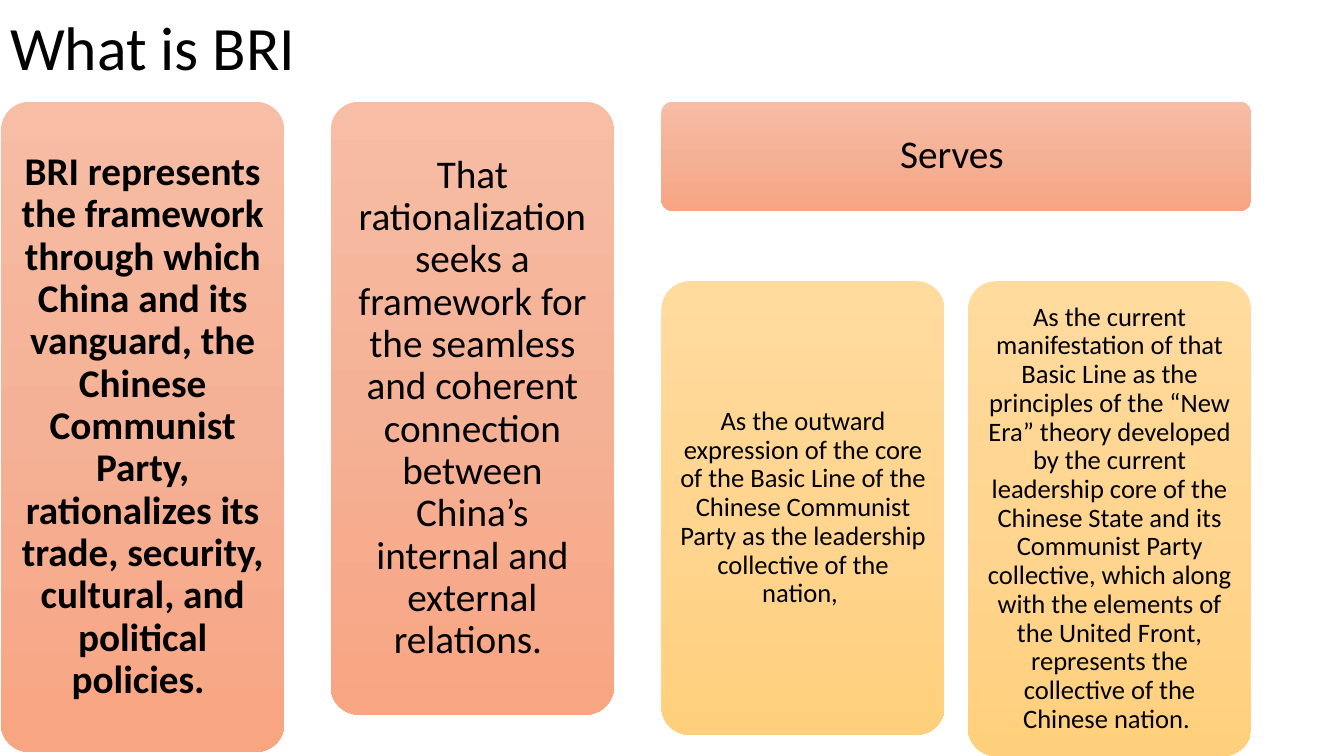
from copy import deepcopy
from dataclasses import dataclass

from pptx import Presentation
from pptx.dml.color import RGBColor
from pptx.enum.shapes import MSO_SHAPE
from pptx.enum.text import MSO_ANCHOR, MSO_AUTO_SIZE, PP_ALIGN
from pptx.oxml.ns import qn
from pptx.util import Inches, Pt

COLORS = {"text": "000000"}
GRADIENTS = {
    "salmon": ("F7BDA5", "F5B196", "F8A582"),
    "gold": ("FFDB9E", "FFD590", "FFD07C"),
}
FONT = "Calibri"
TOP, LOWER_TOP = 1.01, 2.79
CARD_WIDTH = 2.81


@dataclass
class Card:
    text: str
    left: float
    top: float
    width: float
    height: float
    gradient: str = "salmon"
    size: int = 28
    inset: float = 0.12
    bold: bool = False


CARDS = [
    Card("BRI represents the framework through which China and its vanguard, "
         "the Chinese Communist Party, rationalizes its trade, security, "
         "cultural, and political policies. ",
         0.01, TOP, CARD_WIDTH, 6.45, bold=True),
    Card("That rationalization seeks a framework for the seamless and coherent "
         "connection between China’s internal and external relations. ",
         3.28, TOP, CARD_WIDTH, 6.08),
    Card("Serves ", 6.56, TOP, 5.85, 1.08),
    Card("As the outward expression of the core of the Basic Line of the "
         "Chinese Communist Party as the leadership collective of the nation, ",
         6.56, LOWER_TOP, CARD_WIDTH, 4.5, "gold", 19, 0.08),
    Card("As the current manifestation of that Basic Line as the principles of "
         "the “New Era” theory developed by the current leadership core of the "
         "Chinese State and its Communist Party collective, which along with "
         "the elements of the United Front, represents the collective of the "
         "Chinese nation. ",
         9.6, LOWER_TOP, CARD_WIDTH, 4.71, "gold", 19, 0.08),
]


def format_text(text_frame, size: int, align: PP_ALIGN, bold: bool = False) -> None:
    text_frame.word_wrap = True
    text_frame.auto_size = MSO_AUTO_SIZE.NONE
    text_frame.vertical_anchor = MSO_ANCHOR.MIDDLE
    paragraph = text_frame.paragraphs[0]
    paragraph.alignment = align
    paragraph.line_spacing = 0.9
    font = paragraph.runs[0].font
    font.name, font.size, font.bold = FONT, Pt(size), bold
    font.color.rgb = RGBColor.from_string(COLORS["text"])


def fill_gradient(shape, colors: tuple[str, ...]) -> None:
    shape.fill.gradient()
    shape.fill.gradient_angle = 270  # top to bottom
    # Add the middle stop to the two default ones
    stop_list = shape._element.spPr.find(".//" + qn("a:gsLst"))
    stop_list.insert(1, deepcopy(stop_list[0]))
    for index, (stop, color) in enumerate(zip(shape.fill.gradient_stops, colors)):
        stop.position = index / (len(colors) - 1)
        stop.color.rgb = RGBColor.from_string(color)


def add_card(slide, card: Card) -> None:
    shape = slide.shapes.add_shape(
        MSO_SHAPE.ROUNDED_RECTANGLE, Inches(card.left), Inches(card.top),
        Inches(card.width), Inches(card.height))
    shape.adjustments[0] = 0.1
    shape.shadow.inherit = False
    shape.line.fill.background()
    fill_gradient(shape, GRADIENTS[card.gradient])
    text_frame = shape.text_frame
    text_frame.text = card.text
    text_frame.margin_left = text_frame.margin_right = Inches(card.inset)
    text_frame.margin_top = text_frame.margin_bottom = Inches(card.inset)
    format_text(text_frame, card.size, PP_ALIGN.CENTER, card.bold)


def main() -> None:
    presentation = Presentation()
    presentation.slide_width, presentation.slide_height = Inches(13.33), Inches(7.5)
    slide = presentation.slides.add_slide(presentation.slide_layouts[5])

    # Title
    title = slide.shapes.title
    title.left, title.top = Inches(0), Inches(0)
    title.width, title.height = Inches(4.39), Inches(1.01)
    title.text_frame.text = "What is BRI"
    format_text(title.text_frame, 44, PP_ALIGN.LEFT)

    # Cards
    for card in CARDS:
        add_card(slide, card)

    presentation.save("out.pptx")


if __name__ == "__main__":
    main()
